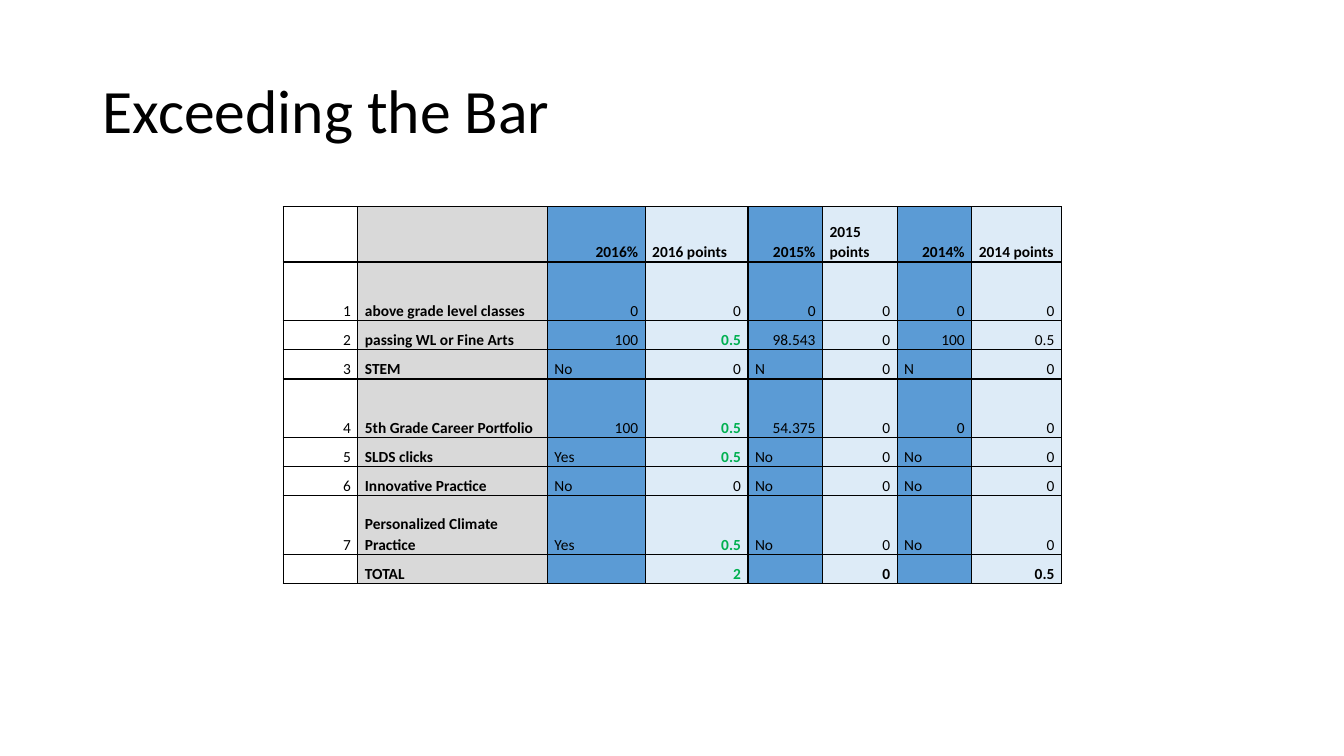
from dataclasses import dataclass

from lxml.etree import SubElement
from pptx import Presentation
from pptx.dml.color import RGBColor
from pptx.enum.text import MSO_ANCHOR, MSO_AUTO_SIZE, PP_ALIGN
from pptx.oxml.ns import qn
from pptx.util import Pt

EMU_PER_PX = 9144  # 100 px to the inch


@dataclass(frozen=True)
class Theme:
    font: str = "Calibri"
    title_size: int = 44
    table_size: int = 11
    ink: str = "000000"
    gain: str = "00B050"
    number_fill: str = "FFFFFF"
    label_fill: str = "D9D9D9"
    percent_fill: str = "5B9BD5"
    points_fill: str = "DDEBF7"


THEME = Theme()

COLUMN_WIDTHS = [74, 188, 97, 102, 74, 74, 74, 89]
COLUMN_FILLS = [THEME.number_fill, THEME.label_fill] + [THEME.percent_fill, THEME.points_fill] * 3
ROW_HEIGHTS = [55, 58, 29, 29, 58, 29, 29, 58, 29]
LABEL_COLUMN = 1
CURRENT_POINTS_COLUMN = 3

SCORES = [
    ["", "", "2016%", "2016 points", "2015%", "2015 points", "2014%", "2014 points"],
    ["1", "above grade level classes", "0", "0", "0", "0", "0", "0"],
    ["2", "passing WL or Fine Arts", "100", "0.5", "98.543", "0", "100", "0.5"],
    ["3", "STEM", "No", "0", "N", "0", "N", "0"],
    ["4", "5th Grade Career Portfolio", "100", "0.5", "54.375", "0", "0", "0"],
    ["5", "SLDS clicks", "Yes", "0.5", "No", "0", "No", "0"],
    ["6", "Innovative Practice", "No", "0", "No", "0", "No", "0"],
    ["7", "Personalized Climate Practice", "Yes", "0.5", "No", "0", "No", "0"],
    ["", "TOTAL", "", "2", "", "0", "", "0.5"],
]


def px(length):
    return length * EMU_PER_PX


def write_text(frame, text, *, size, color=THEME.ink, bold=False, align=PP_ALIGN.LEFT, spacing=1.0):
    para = frame.paragraphs[0]
    para.alignment = align
    para.line_spacing = spacing
    if not text:
        # An empty cell still needs its type size, or its row grows
        SubElement(para._p, qn("a:endParaRPr"), sz=str(size * 100))
        return
    span = para.add_run()
    span.text = text
    span.font.name = THEME.font
    span.font.size = Pt(size)
    span.font.bold = bold
    span.font.color.rgb = RGBColor.from_string(color)


def add_borders(cell, color, width):
    properties = cell._tc.get_or_add_tcPr()
    for side in ("a:lnL", "a:lnR", "a:lnT", "a:lnB"):
        line = SubElement(properties, qn(side), w=str(Pt(width)))
        SubElement(SubElement(line, qn("a:solidFill")), qn("a:srgbClr"), val=color)


def place_title(page, box, text):
    title = page.shapes.title
    title.left, title.top, title.width, title.height = map(px, box)
    frame = title.text_frame
    frame.word_wrap = True
    frame.auto_size = MSO_AUTO_SIZE.NONE
    frame.vertical_anchor = MSO_ANCHOR.MIDDLE
    write_text(frame, text, size=THEME.title_size, spacing=0.9)


def fill_cell(cell, text, row, column):
    is_header = row == 0
    is_total = row == len(SCORES) - 1
    is_number = text.replace(".", "").isdigit() or text.endswith("%")
    is_gain = column == CURRENT_POINTS_COLUMN and not is_header and text != "0"

    add_borders(cell, THEME.ink, 1)
    cell.fill.solid()
    cell.fill.fore_color.rgb = RGBColor.from_string(COLUMN_FILLS[column])
    cell.margin_left = cell.margin_right = px(7)
    cell.margin_top = cell.margin_bottom = 0
    cell.vertical_anchor = MSO_ANCHOR.BOTTOM
    write_text(
        cell.text_frame,
        text,
        size=THEME.table_size,
        color=THEME.gain if is_gain else THEME.ink,
        bold=is_header or is_total or is_gain or column == LABEL_COLUMN,
        align=PP_ALIGN.RIGHT if is_number else PP_ALIGN.LEFT,
        spacing=1.07,
    )


def place_score_table(page, box):
    table = page.shapes.add_table(len(SCORES), len(COLUMN_WIDTHS), *map(px, box)).table
    table.first_row = table.horz_banding = False
    for column, width in zip(table.columns, COLUMN_WIDTHS):
        column.width = px(width)
    for row, height in zip(table.rows, ROW_HEIGHTS):
        row.height = px(height)
    for row, values in enumerate(SCORES):
        for column, text in enumerate(values):
            fill_cell(table.cell(row, column), text, row, column)


def main():
    deck = Presentation()
    deck.slide_width, deck.slide_height = px(1333), px(750)
    title_only = deck.slide_layouts.get_by_name("Title Only")
    page = deck.slides.add_slide(title_only)

    # Heading
    place_title(page, (92, 40, 1150, 145), "Exceeding the Bar")
    # Points by measure and year
    place_score_table(page, (281, 205, sum(COLUMN_WIDTHS), sum(ROW_HEIGHTS)))

    deck.save("out.pptx")


if __name__ == "__main__":
    main()
